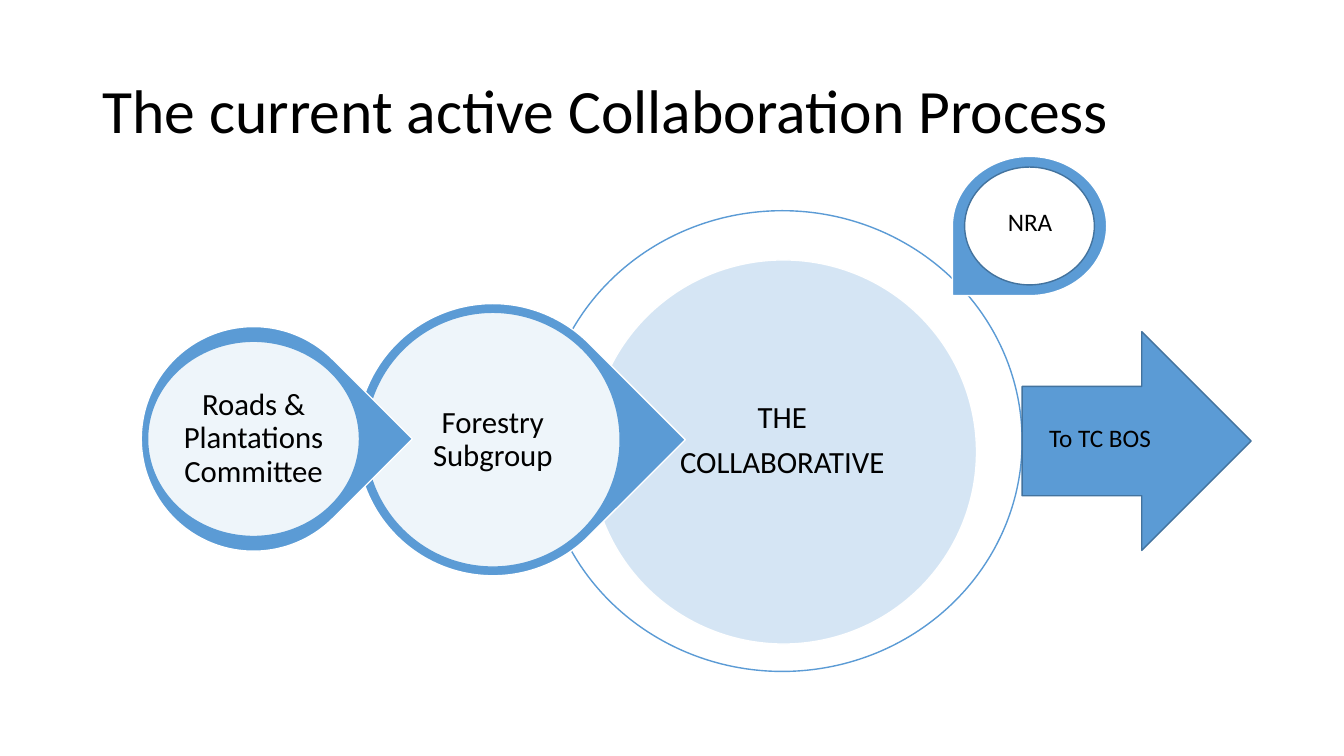
from dataclasses import dataclass
from typing import NamedTuple

from lxml.etree import SubElement
from pptx import Presentation
from pptx.dml.color import RGBColor
from pptx.enum.shapes import MSO_SHAPE as Preset
from pptx.enum.text import MSO_ANCHOR as Anchor, MSO_AUTO_SIZE as AutoSize, PP_ALIGN as Align
from pptx.oxml.ns import qn
from pptx.util import Cm, Pt


@dataclass(frozen=True)
class Theme:
    font: str = "Calibri"
    black: str = "000000"
    white: str = "FFFFFF"
    blue: str = "5B9BD5"
    dark_blue: str = "43739E"
    title_size: int = 44
    stage_size: int = 22
    note_size: int = 18


THEME = Theme()


class Box(NamedTuple):
    """A rectangle in centimetres."""
    left: float
    top: float
    width: float
    height: float

    def inset(self, dx, dy):
        return Box(self.left + dx, self.top + dy, self.width - 2 * dx, self.height - 2 * dy)

    def within(self, dx, dy, width, height):
        return Box(self.left + dx, self.top + dy, width, height)

    def lengths(self):
        return [Cm(value) for value in self]


def add_preset(shapes, preset, box, fill, line, opacity=100, rotation=0):
    figure = shapes.add_shape(preset, *box.lengths())
    figure.shadow.inherit = False
    figure.rotation = rotation
    figure.fill.solid()
    figure.fill.fore_color.rgb = RGBColor.from_string(fill)
    if opacity < 100:
        colour = figure.element.spPr.find(f"{qn('a:solidFill')}/{qn('a:srgbClr')}")
        SubElement(colour, qn("a:alpha")).set("val", str(opacity * 1000))
    figure.line.color.rgb = RGBColor.from_string(line)
    figure.line.width = Pt(1)
    return figure


def add_drop(shapes, box, rotation):
    drop = add_preset(shapes, Preset.TEAR, box, THEME.blue, THEME.white, rotation=rotation)
    drop.adjustments[0] = 1


def format_text(frame, size, align=Align.LEFT, line_spacing=1.0, space_after=0):
    for paragraph in frame.paragraphs:
        paragraph.alignment = align
        paragraph.line_spacing = line_spacing
        paragraph.space_before = Pt(0)
        paragraph.space_after = Pt(space_after)
        for run in paragraph.runs:
            run.font.name = THEME.font
            run.font.size = Pt(size)
            run.font.color.rgb = RGBColor.from_string(THEME.black)


def add_stage_label(shapes, disc, text):
    """Centre a label in a disc, one seventh in from each side."""
    frame = shapes.add_textbox(*disc.inset(disc.width / 7, disc.height / 7).lengths()).text_frame
    frame.word_wrap = True
    frame.vertical_anchor = Anchor.MIDDLE
    frame.margin_left = frame.margin_right = frame.margin_top = frame.margin_bottom = Cm(0.08)
    frame.text = text
    format_text(frame, THEME.stage_size, Align.CENTER, 0.9, 8.5)


def add_note(shapes, box, text):
    frame = shapes.add_textbox(*box.lengths()).text_frame
    frame.word_wrap = True
    frame.auto_size = AutoSize.SHAPE_TO_FIT_TEXT
    frame.text = text
    format_text(frame, THEME.note_size)


def add_title(slide, box, text):
    title = slide.shapes.title
    title.left, title.top, title.width, title.height = box.lengths()
    frame = title.text_frame
    frame.text = text
    frame.word_wrap = True
    frame.auto_size = AutoSize.NONE
    frame.vertical_anchor = Anchor.MIDDLE
    format_text(frame, THEME.title_size, line_spacing=0.9)


def add_collaborative(shapes, ring):
    core = ring.within(1.21, 1.24, 9.73, 9.68)
    add_preset(shapes, Preset.OVAL, core, THEME.blue, THEME.white)
    add_preset(shapes, Preset.OVAL, ring, THEME.white, THEME.blue, opacity=75)
    add_stage_label(shapes, ring, "THE\nCOLLABORATIVE")


def add_group_stage(shapes, box, rim, text):
    """Draw a drop pointing right, with a pale disc inside its rim."""
    add_drop(shapes, box, 45)
    disc = box.inset(*rim)
    add_preset(shapes, Preset.OVAL, disc, THEME.white, THEME.blue, opacity=90)
    add_stage_label(shapes, disc, text)


def add_outcome(shapes, box):
    add_preset(shapes, Preset.RIGHT_ARROW, box, THEME.blue, THEME.dark_blue)
    add_note(shapes, box.within(0.43, 2.16, 3.86, 1.02), "To TC BOS")


def add_nra(shapes, box):
    add_drop(shapes, box, 180)
    add_preset(shapes, Preset.OVAL, box.inset(0.31, 0.27), THEME.white, THEME.dark_blue)
    add_note(shapes, box.within(1.15, 1.14, 2.06, 1.02), "NRA")


def main():
    deck = Presentation()
    deck.slide_width, deck.slide_height = Cm(33.87), Cm(19.05)
    slide = deck.slides.add_slide(deck.slide_layouts.get_by_name("Title Only"))
    add_title(slide, Box(2.33, 1.02, 29.21, 3.68), "The current active Collaboration Process")

    process = slide.shapes.add_group_shape().shapes
    add_collaborative(process, Box(13.67, 5.31, 12.09, 11.61))
    add_group_stage(process, Box(8.99, 7.65, 6.86, 6.86), (0.22, 0.22), "Forestry Subgroup")
    add_group_stage(process, Box(3.56, 8.23, 5.66, 5.66), (0.16, 0.37),
                    "Roads & Plantations Committee")

    add_outcome(slide.shapes, Box(25.76, 8.36, 5.77, 5.51))
    add_nra(slide.shapes, Box(24, 3.94, 3.89, 3.51))
    deck.save("out.pptx")


if __name__ == "__main__":
    main()
